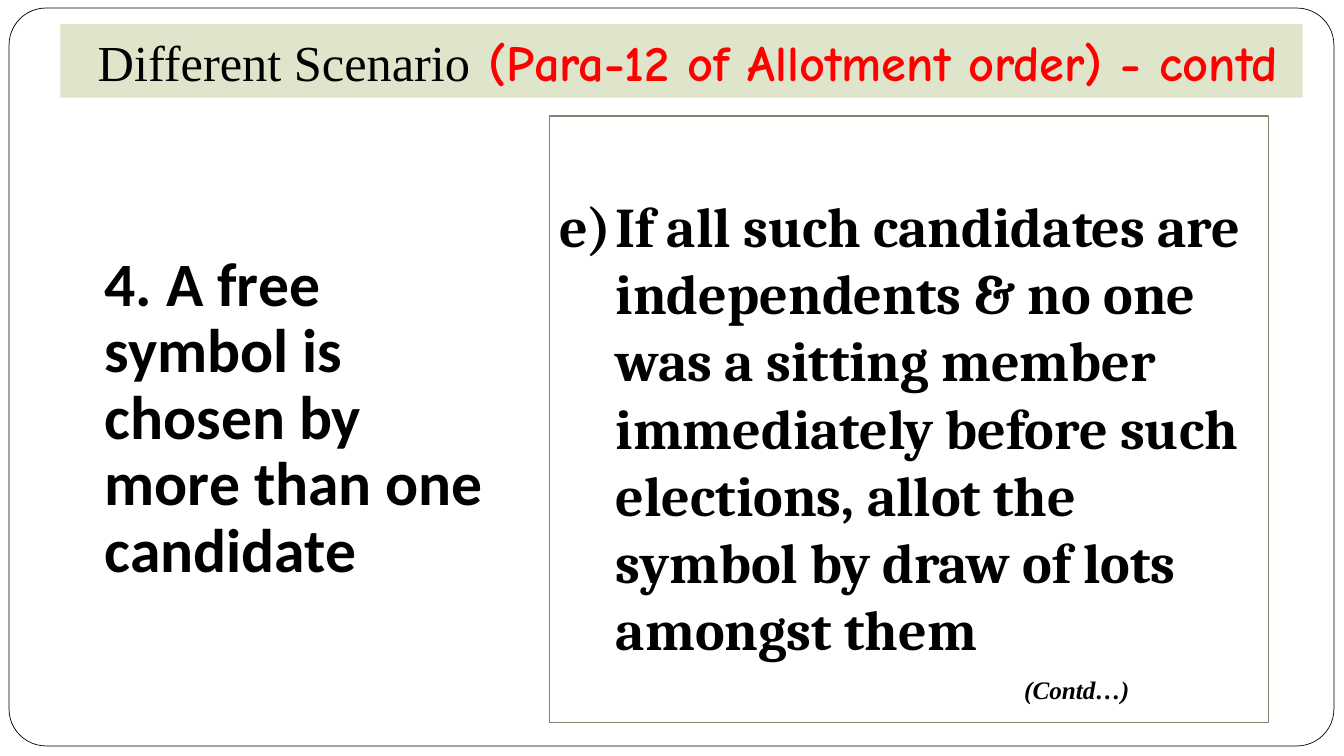
from lxml import etree
from pptx import Presentation
from pptx.dml.color import RGBColor
from pptx.enum.shapes import MSO_SHAPE
from pptx.enum.text import MSO_ANCHOR, MSO_AUTO_SIZE, PP_ALIGN
from pptx.oxml.ns import qn
from pptx.util import Inches, Pt

RECTANGLE = MSO_SHAPE.RECTANGLE
ROUNDED = MSO_SHAPE.ROUNDED_RECTANGLE
TOP = MSO_ANCHOR.TOP
MIDDLE = MSO_ANCHOR.MIDDLE
LEFT = PP_ALIGN.LEFT
CENTER = PP_ALIGN.CENTER
FIT_SHAPE = MSO_AUTO_SIZE.SHAPE_TO_FIT_TEXT

BLACK = "000000"
WHITE = "FFFFFF"
RED = "FF0000"
PALE_GREEN = "DFE5CA"
OLIVE = "7A866C"


def color(value):
    return RGBColor.from_string(value)


def set_values(target, values):
    for name, value in values.items():
        setattr(target, name, value)


def add_panel(slide, kind, box, fill=None, line=None, line_width=1):
    shape = slide.shapes.add_shape(kind, *map(Inches, box))
    shape.shadow.inherit = False
    if fill:
        shape.fill.solid()
        shape.fill.fore_color.rgb = color(fill)
    else:
        shape.fill.background()
    if line:
        shape.line.color.rgb = color(line)
        shape.line.width = Pt(line_width)
    else:
        shape.line.fill.background()
    return shape


def write_text(shape, runs, frame_format, paragraph_format):
    set_values(shape.text_frame, frame_format)
    paragraph = shape.text_frame.paragraphs[0]
    set_values(paragraph, paragraph_format)
    for text, font_color, font_format in runs:
        run = paragraph.add_run()
        run.text = text
        run.font.color.rgb = color(font_color)
        set_values(run.font, font_format)
    return paragraph


def number_paragraph(paragraph, start, indent):
    properties = paragraph._p.get_or_add_pPr()
    properties.set("marL", str(Inches(indent)))
    properties.set("indent", str(Inches(-indent)))
    numbering = etree.SubElement(properties, qn("a:buAutoNum"))
    numbering.set("type", "alphaLcParenR")
    numbering.set("startAt", str(start))


def add_title(slide):
    title = add_panel(slide, RECTANGLE, (0.6, 0.24, 12.32, 0.73), PALE_GREEN)
    runs = [
        (" Different Scenario", BLACK, {"name": "Times New Roman", "size": Pt(36)}),
        (" (Para-12 of Allotment order) - contd", RED,
         {"name": "Comic Neue", "size": Pt(36), "bold": True}),
    ]
    write_text(title, runs, {"word_wrap": True, "vertical_anchor": MIDDLE},
               {"alignment": CENTER})


def add_rule(slide):
    panel = add_panel(slide, RECTANGLE, (5.45, 1.15, 7.13, 6.02), line=OLIVE)
    text = ("If all such candidates are independents & no one was a sitting member "
            "immediately before such elections, allot the symbol by draw of lots "
            "amongst them")
    runs = [(text, BLACK, {"name": "Cambria", "size": Pt(40), "bold": True})]
    frame_format = {"word_wrap": True, "vertical_anchor": TOP, "margin_top": Inches(0.75)}
    paragraph = write_text(panel, runs, frame_format, {"alignment": LEFT})
    number_paragraph(paragraph, start=5, indent=0.56)


def add_text(slide, box, text, font_format, frame_format, paragraph_format):
    text_box = slide.shapes.add_textbox(*map(Inches, box))
    write_text(text_box, [(text, BLACK, font_format)], frame_format, paragraph_format)


def main():
    presentation = Presentation()
    presentation.slide_width = Inches(13.33)
    presentation.slide_height = Inches(7.5)
    slide = presentation.slides.add_slide(presentation.slide_layouts[6])

    border = add_panel(slide, ROUNDED, (0.09, 0.08, 13.14, 7.32), WHITE, BLACK, 0.5)
    border.adjustments[0] = 0.05
    add_rule(slide)
    add_text(slide, (0.94, 1.15, 4.13, 6.02),
             "4. A free symbol is chosen by more than one candidate",
             {"name": "Calibri", "size": Pt(44), "bold": True},
             {"word_wrap": True, "vertical_anchor": MIDDLE},
             {"line_spacing": 0.9, "space_before": Pt(10)})
    add_title(slide)
    add_text(slide, (10.06, 6.64, 1.25, 0.4), "(Contd…)",
             {"name": "Times New Roman", "size": Pt(18), "bold": True, "italic": True},
             {"word_wrap": False, "auto_size": FIT_SHAPE}, {"alignment": LEFT})

    presentation.save("out.pptx")


if __name__ == "__main__":
    main()
